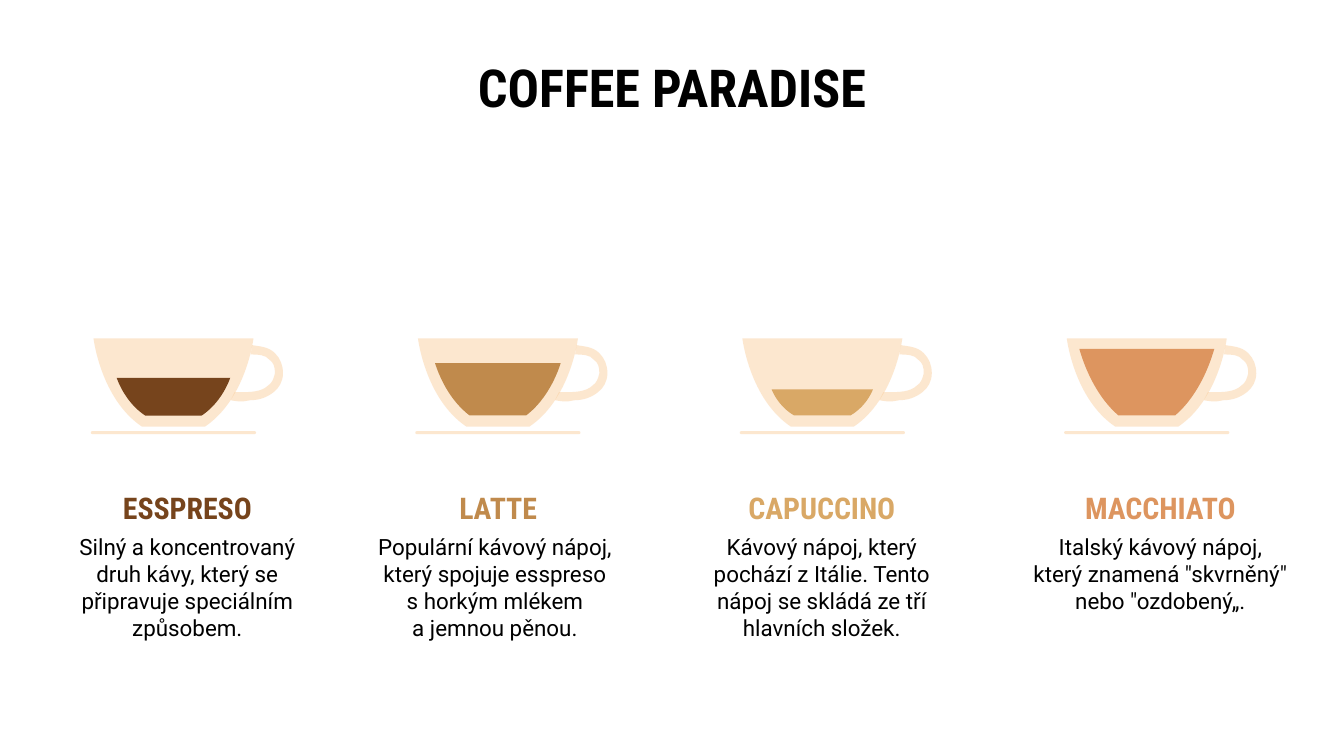
from lxml import etree
from pptx import Presentation
from pptx.dml.color import RGBColor
from pptx.enum import shapes, text
from pptx.oxml import ns
from pptx.util import Pt

BLACK = RGBColor(0x00, 0x00, 0x00)
CREAM = RGBColor(0xFA, 0xCA, 0x93)
ESPRESSO = RGBColor(0x76, 0x44, 0x1C)
LATTE = RGBColor(0xC0, 0x8A, 0x4C)
CAPPUCCINO = RGBColor(0xD9, 0xA8, 0x66)
MACCHIATO = RGBColor(0xDD, 0x95, 0x5F)

CUP_LEFT, CUP_TOP, CUP_STEP = 50.1, 181.3, 173.8
CUP_WIDTH = 85.7
COFFEE_BOTTOM, COFFEE_BASE_LEFT = 41.3, 27.7
NBSP = chr(160)

# Name and its centre, description and its centre, colour,
# left and top of the coffee in its cup
DRINKS = [
    ("ESSPRESO", 100.4, "Silný a koncentrovaný druh kávy, který se připravuje "
     "speciálním způsobem.", 100.4, ESPRESSO, 12.4, 21.1),
    ("LATTE", 266.9, "Populární kávový nápoj, který spojuje esspreso "
     f"s{NBSP}horkým mlékem a{NBSP}jemnou pěnou.", 265.2, LATTE, 9.2, 13.3),
    ("CAPUCCINO", 440.3, "Kávový nápoj, který pochází z Itálie. Tento nápoj "
     "se skládá ze tří hlavních složek.", 440.3, CAPPUCCINO, 15.7, 27.4),
    ("MACCHIATO", 621.7, 'Italský kávový nápoj, který znamená "skvrněný" '
     'nebo "ozdobený„.', 621.7, MACCHIATO, 6.7, 5.6),
]

# An outline is a list of parts: [end] is a line, [control, control, end] a curve
HANDLE = [
    [(85, 3.6)], [(84.2, 8.6)],
    [(87.8, 8.6), (92.2, 8.6), (94.3, 11.5)],
    [(96.5, 13), (97.2, 15.1), (97.2, 18.7)],
    [(96.5, 21.6), (95.8, 23.8), (93.6, 25.2)],
    [(90, 28.8), (83.5, 28.8), (79.2, 28.8)],
    [(77.8, 28.8), (76.3, 28.8), (75.6, 28.8)],
    [(73.4, 33.1)],
    [(73.4, 33.1), (76.3, 33.8), (79.9, 33.8)],
    [(81.4, 33.8), (82.8, 33.1), (84.2, 33.1)],
    [(88.6, 33.1), (92.9, 31.7), (96.5, 28.8)],
    [(99.4, 26.6), (101.5, 23), (101.5, 18.7)],
    [(101.5, 14.4), (100.1, 10.8), (97.2, 7.9)],
    [(93.6, 4.3), (88.6, 4.3), (85, 3.6)],
]
BOWL_SIDE = [(0, 0), (0, 0), (3.9, 32.4), (25.9, 47.2)]


def draw_outline(group, outline, left, top):
    """Add a closed freeform, turning each three-point part into a Bézier curve."""
    start, *rest = [(Pt(x), Pt(y)) for part in outline for x, y in part]
    builder = group.shapes.build_freeform(*start)
    builder.add_line_segments(rest, close=True)
    shape = builder.convert_to_shape(Pt(left), Pt(top))
    lines = iter(shape._element.findall(".//" + ns.qn("a:lnTo")))
    for part in outline[1:]:
        first = next(lines)
        if len(part) == 3:
            first.tag = ns.qn("a:cubicBezTo")
            for extra in (next(lines), next(lines)):
                first.append(extra[0])
                extra.getparent().remove(extra)
    return shape


def paint(shape, color, opacity=100):
    shape.shadow.inherit = False
    shape.line.fill.background()
    shape.fill.solid()
    shape.fill.fore_color.rgb = color
    if opacity < 100:
        srgb = shape.fill._xPr.find(".//" + ns.qn("a:srgbClr"))
        etree.SubElement(srgb, ns.qn("a:alpha"), val=str(opacity * 1000))


prs = Presentation()
prs.slide_width, prs.slide_height = Pt(720), Pt(405)
slide = prs.slides.add_slide(prs.slide_layouts[5])

title = slide.shapes.title
title.left, title.top, title.width, title.height = Pt(24.5), Pt(22.3), Pt(671), Pt(45.4)
labels = [(title.text_frame, "COFFEE PARADISE", "Roboto Condensed", 28, True, BLACK)]

for i, (name, name_centre, description, description_centre,
        color, coffee_left, coffee_top) in enumerate(DRINKS):
    cup_left = CUP_LEFT + i * CUP_STEP
    run, depth = COFFEE_BASE_LEFT - coffee_left, COFFEE_BOTTOM - coffee_top
    coffee_side = [(coffee_left, coffee_top),
                   (coffee_left + 0.16 * run, coffee_top + 0.33 * depth),
                   (coffee_left + 0.48 * run, coffee_top + 0.74 * depth),
                   (COFFEE_BASE_LEFT, COFFEE_BOTTOM)]
    bowl, coffee = [], []
    for outline, side in ((bowl, BOWL_SIDE), (coffee, coffee_side)):
        mirrored = [(CUP_WIDTH - x, y) for x, y in reversed(side)]
        outline += [side[:1], side[1:], mirrored[:1], mirrored[1:]]

    cup = slide.shapes.add_group_shape()
    for outline, fill, opacity in (
            (bowl, CREAM, 44), (HANDLE, CREAM, 44), (coffee, color, 100)):
        paint(draw_outline(cup, outline, cup_left, CUP_TOP), fill, opacity)

    saucer = cup.shapes.add_shape(
        shapes.MSO_SHAPE.ROUNDED_RECTANGLE,
        Pt(cup_left - 1.4), Pt(CUP_TOP + 49.7), Pt(88.5), Pt(1.6))
    saucer.adjustments[0] = 0.5
    paint(saucer, CREAM, 44)

    for wording, centre, font, size, bold, ink, top, width, height in (
            (name, name_centre, "Roboto Condensed", 16, True, color, 252.3, 103, 30.2),
            (description, description_centre, "Roboto", 12, False, BLACK,
             278.6, 152, 45.4)):
        box = slide.shapes.add_textbox(
            Pt(centre - width / 2), Pt(top), Pt(width), Pt(height))
        labels.append((box.text_frame, wording, font, size, bold, ink))

for frame, wording, font, size, bold, ink in labels:
    frame.word_wrap = True
    frame.auto_size = text.MSO_AUTO_SIZE.NONE
    frame.vertical_anchor = text.MSO_ANCHOR.TOP
    frame.margin_left = frame.margin_right = Pt(7.2)
    frame.margin_top = frame.margin_bottom = Pt(7.2)
    frame.text = wording
    paragraph = frame.paragraphs[0]
    paragraph.alignment = text.PP_ALIGN.CENTER
    if size == 16:
        paragraph.line_spacing = 1.15
        paragraph.space_after = Pt(16)
    paragraph.font.name = font
    paragraph.font.size = Pt(size)
    paragraph.font.bold = bold
    paragraph.font.color.rgb = ink

prs.save("out.pptx")
